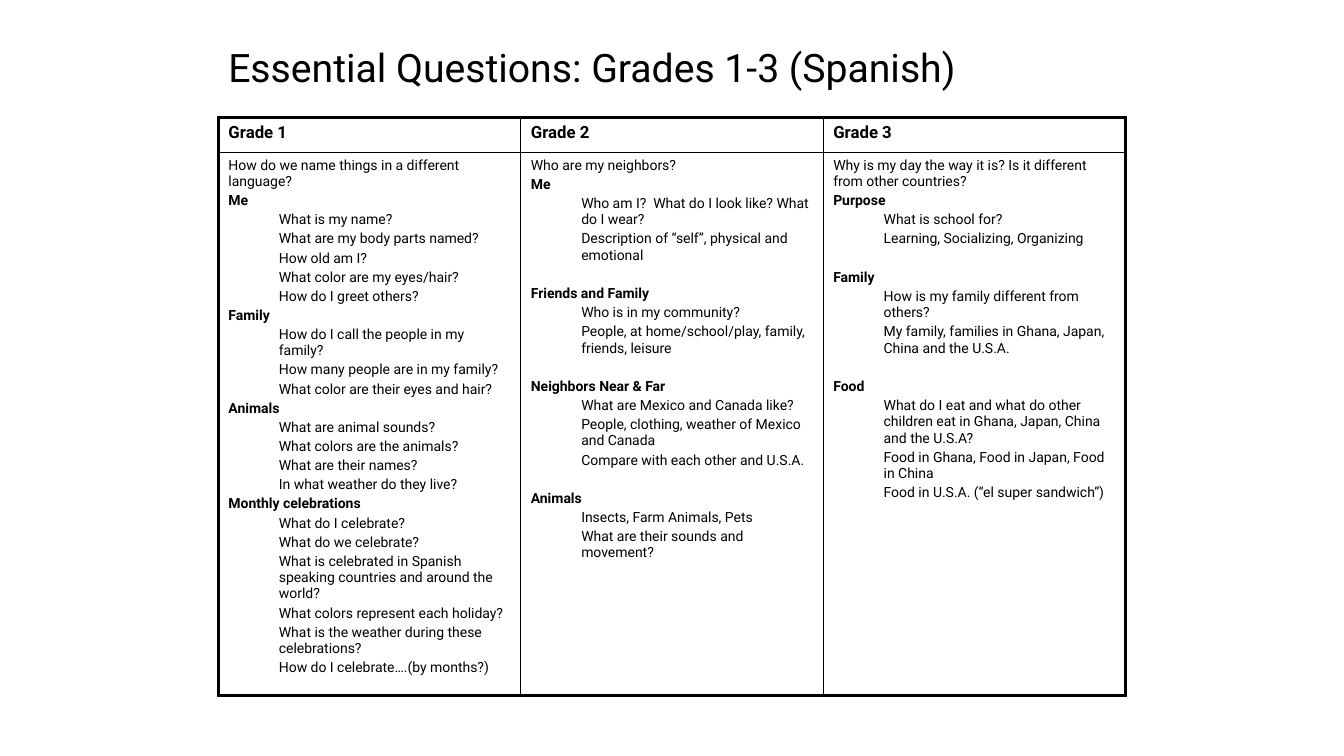
from lxml.etree import SubElement
from pptx import Presentation
from pptx.dml.color import RGBColor as RGB
from pptx.enum.text import MSO_ANCHOR as ANCHOR
from pptx.oxml.ns import qn
from pptx.util import Pt

PX = 9525
COLORS = {"ink": "000000", "paper": "FFFFFF"}
THIN, THICK = 1, 2.25
INDENT = 48

TITLE = "Essential Questions: Grades 1-3 (Spanish)"
# grade, opening question, space before each later topic, topics with their questions
GRADES = [
    ("Grade 1", "How do we name things in a different language?", 2, [
        ("Me", ["What is my name?", "What are my body parts named?", "How old am I?",
                "What color are my eyes/hair?", "How do I greet others?"]),
        ("Family", ["How do I call the people in my family?",
                    "How many people are in my family?",
                    "What color are their eyes and hair?"]),
        ("Animals", ["What are animal sounds?", "What colors are the animals?",
                     "What are their names?", "In what weather do they live?"]),
        ("Monthly celebrations", [
            "What do I celebrate?", "What do we celebrate?",
            "What is celebrated in Spanish speaking countries and around the world?",
            "What colors represent each holiday?",
            "What is the weather during these celebrations?",
            "How do I celebrate….(by months?)"]),
    ]),
    ("Grade 2", "Who are my neighbors?", 15.7, [
        ("Me", ["Who am I?  What do I look like? What do I wear?",
                "Description of “self”, physical and emotional"]),
        ("Friends and Family", ["Who is in my community?",
                                "People, at home/school/play, family, friends, leisure"]),
        ("Neighbors Near & Far", ["What are Mexico and Canada like?",
                                  "People, clothing, weather of Mexico and Canada",
                                  "Compare with each other and U.S.A."]),
        ("Animals", ["Insects, Farm Animals, Pets", "What are their sounds and movement?"]),
    ]),
    ("Grade 3", "Why is my day the way it is? Is it different from other countries?", 15.7, [
        ("Purpose", ["What is school for?", "Learning, Socializing, Organizing"]),
        ("Family", ["How is my family different from others?",
                    "My family, families in Ghana, Japan, China and the U.S.A."]),
        ("Food", ["What do I eat and what do other children eat in Ghana, Japan, "
                  "China and the U.S.A?",
                  "Food in Ghana, Food in Japan, Food in China",
                  "Food in U.S.A. (“el super sandwich”)"]),
    ]),
]


def topic_paragraphs(opening, gap, topics):
    """List the (text, format) pairs of one body cell."""
    body = {"size": 10, "before": 2}
    paragraphs = [(opening, body)]
    for i, (topic, questions) in enumerate(topics):
        paragraphs.append((topic, {**body, "bold": True, "before": gap if i else 2}))
        paragraphs += [(q, {**body, "level": 1}) for q in questions]
    return paragraphs


class Page:
    def __init__(self, prs, font):
        self.slide = prs.slides.add_slide(prs.slide_layouts[6])
        self.font = font

    def fill_text(self, tf, paragraphs):
        for i, (text, fmt) in enumerate(paragraphs):
            p = tf.paragraphs[0] if i == 0 else tf.add_paragraph()
            level = fmt.get("level", 0)
            for name, value in {"level": level, "space_before": Pt(fmt.get("before", 0)),
                                "line_spacing": fmt.get("spacing", 1.0)}.items():
                setattr(p, name, value)
            pPr = p._p.get_or_add_pPr()
            pPr.set("marL", str(level * INDENT * PX))
            pPr.set("indent", "0")
            r = p.add_run()
            r.text = text
            for name, value in {"name": self.font, "size": Pt(fmt["size"]),
                                "bold": fmt.get("bold", False)}.items():
                setattr(r.font, name, value)
            r.font.color.rgb = RGB.from_string(COLORS["ink"])

    def title(self, box, text):
        sp = self.slide.shapes.add_textbox(*(v * PX for v in box))
        tf = sp.text_frame
        tf.word_wrap = True
        tf.vertical_anchor = ANCHOR.MIDDLE
        self.fill_text(tf, [(text, {"size": 28, "spacing": 0.9})])

    def borders(self, cell, widths):
        tcPr = cell._tc.get_or_add_tcPr()
        for i, (side, width) in enumerate(widths.items()):
            ln = SubElement(tcPr, qn(f"a:ln{side}"), w=str(int(Pt(width))))
            fill = SubElement(ln, qn("a:solidFill"))
            SubElement(fill, qn("a:srgbClr"), val=COLORS["ink"])
            tcPr.insert(i, ln)

    def table(self, box, heights, rows):
        n_rows, n_cols = len(rows), len(rows[0])
        frame = self.slide.shapes.add_table(n_rows, n_cols, *(v * PX for v in box))
        table = frame.table
        table.first_row = table.horz_banding = False
        for i, row in enumerate(rows):
            table.rows[i].height = heights[i] * PX
            for j, paragraphs in enumerate(row):
                cell = table.cell(i, j)
                cell.fill.solid()
                cell.fill.fore_color.rgb = RGB.from_string(COLORS["paper"])
                outer = {"L": j == 0, "R": j == n_cols - 1, "T": i == 0, "B": i == n_rows - 1}
                self.borders(cell, {s: THICK if edge else THIN for s, edge in outer.items()})
                self.fill_text(cell.text_frame, paragraphs)


def main():
    prs = Presentation()
    prs.slide_width, prs.slide_height = 1280 * PX, 720 * PX
    page = Page(prs, "Roboto")
    page.title((208, 29, 864, 75), TITLE)
    header = [[(grade, {"size": 12, "bold": True, "before": 2.4})] for grade, *_ in GRADES]
    body = [topic_paragraphs(*content) for _, *content in GRADES]
    heights = (33, 503)
    page.table((208, 112, 864, sum(heights)), heights, [header, body])
    prs.save("out.pptx")


if __name__ == "__main__":
    main()
